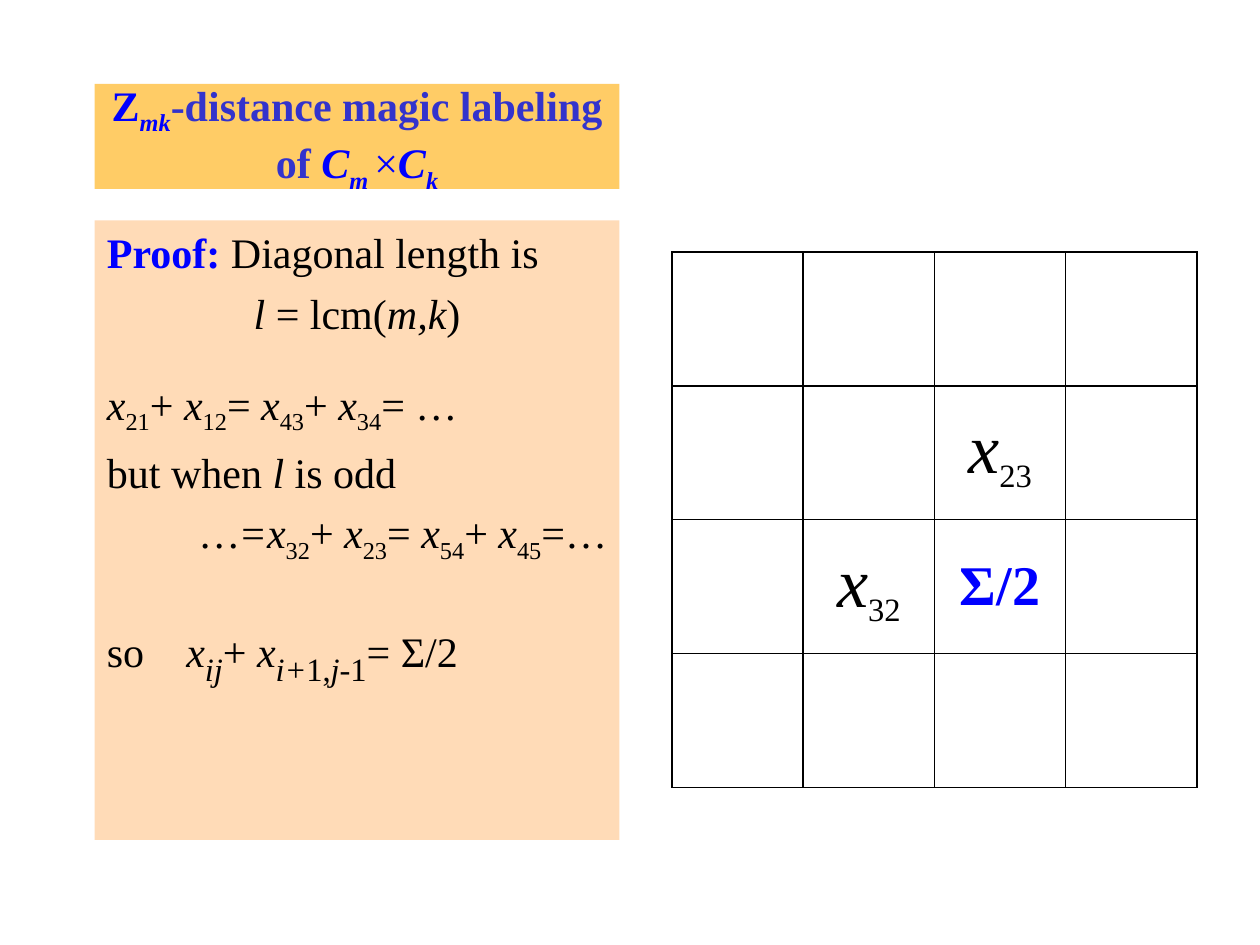
from dataclasses import dataclass

from lxml import etree
from pptx import Presentation, util as u
from pptx.dml.color import RGBColor
from pptx.enum import shapes, text
from pptx.oxml.ns import qn


@dataclass(frozen=True)
class Theme:
    font: str = "Times New Roman"
    ink: str = "000000"
    blue: str = "0000FF"
    violet: str = "3333CC"
    title_fill: str = "FFCC66"
    proof_fill: str = "FFDBB7"
    body_size: int = 24
    large_size: int = 32
    cell_size: int = 40
    line_gap: int = 6
    block_gap: int = 23
    conclusion_gap: int = 27
    border: float = 1


THEME = Theme()
LEFT, CENTER, RIGHT = text.PP_ALIGN.LEFT, text.PP_ALIGN.CENTER, text.PP_ALIGN.RIGHT
SLIDE_WIDTH, SLIDE_HEIGHT = 10, 7.5
GRID_COLUMNS, GRID_ROWS = 120, 90
TITLE_BOX = (9, 8, 50, 10)
PROOF_BOX = (9, 21, 50, 59)
MATRIX_BOX = (64, 24, 50, 51)
MATRIX_SIZE = 4
TAB_STOP = 0.63

# Style letters: i italic, b bold, s subscript, l large, c cell, B blue, V violet
TITLE = [("Z", "bB"), ("mk", "biBs"), ("-distance magic labeling of ", "bV"),
         ("C", "biB"), ("m ", "biBs"), ("×", "B"), ("C", "biB"), ("k", "biBs")]


def chain(start, indices, end):
    runs = [(start, "i")]
    for position, index in enumerate(indices):
        if position:
            runs += [("+" if position % 2 else "=", ""), (" x", "i")]
        runs.append((index, "s"))
    return runs + [(end, "")]


PROOF = [
    (LEFT, THEME.line_gap, [("Proof: ", "bB"), ("Diagonal length is", "")]),
    (CENTER, THEME.line_gap, [("l", "i"), (" = lcm(", ""), ("m,k", "i"), (")", "")]),
    (LEFT, THEME.block_gap, chain("x", ["21", "12", "43", "34"], "= …")),
    (LEFT, THEME.line_gap, [("but when ", ""), ("l", "i"), (" is odd", "")]),
    (RIGHT, THEME.line_gap, chain("…=x", ["32", "23", "54", "45"], "=…")),
    (LEFT, THEME.conclusion_gap,
     [("so\t", ""), ("x", "i"), ("ij", "isl"), ("+", ""), (" x", "i"), ("i+", "isl"),
      ("1,", "sl"), ("j-", "isl"), ("1", "sl"), ("= Σ/2", "")]),
]
MATRIX = {
    (1, 2): [("x", "ic"), ("23", "sl")],
    (2, 1): [("x", "ic"), ("32", "sl")],
    (2, 2): [("Σ/2", "blB")],
}


def place(box):
    units = (SLIDE_WIDTH / GRID_COLUMNS, SLIDE_HEIGHT / GRID_ROWS) * 2
    return [u.Inches(count * unit) for count, unit in zip(box, units)]


def write(paragraph, runs, alignment, gap=0):
    paragraph.alignment = alignment
    paragraph.space_before = u.Pt(gap)
    for words, style in runs:
        run = paragraph.add_run()
        run.text = words
        font = run.font
        font.name = THEME.font
        font.bold, font.italic = "b" in style, "i" in style
        size = (THEME.cell_size if "c" in style else
                THEME.large_size if "l" in style else THEME.body_size)
        font.size = u.Pt(size)
        color = (THEME.blue if "B" in style else
                 THEME.violet if "V" in style else THEME.ink)
        font.color.rgb = RGBColor.from_string(color)
        if "s" in style:
            run._r.get_or_add_rPr().set("baseline", "-25000")
        if "\t" in words:
            tabs = etree.SubElement(paragraph._p.get_or_add_pPr(), qn("a:tabLst"))
            etree.SubElement(tabs, qn("a:tab"), pos=str(u.Inches(TAB_STOP)), algn="l")


def add_panel(slide, box, color, anchor, lines):
    shape = slide.shapes.add_shape(shapes.MSO_SHAPE.RECTANGLE, *place(box))
    shape.shadow.inherit = False
    shape.fill.solid()
    shape.fill.fore_color.rgb = RGBColor.from_string(color)
    shape.line.fill.background()
    frame = shape.text_frame
    frame.word_wrap = True
    frame.vertical_anchor = anchor
    for index, (alignment, gap, runs) in enumerate(lines):
        paragraph = frame.add_paragraph() if index else frame.paragraphs[0]
        write(paragraph, runs, alignment, gap)


def add_borders(cell):
    properties = cell._tc.get_or_add_tcPr()
    for index, side in enumerate(("lnL", "lnR", "lnT", "lnB")):
        line = etree.Element(qn(f"a:{side}"), w=str(u.Pt(THEME.border)))
        fill = etree.SubElement(line, qn("a:solidFill"))
        etree.SubElement(fill, qn("a:srgbClr"), val=THEME.ink)
        properties.insert(index, line)


def add_matrix(slide):
    table = slide.shapes.add_table(MATRIX_SIZE, MATRIX_SIZE, *place(MATRIX_BOX)).table
    table.first_row = table.horz_banding = False
    for row in range(MATRIX_SIZE):
        for column in range(MATRIX_SIZE):
            cell = table.cell(row, column)
            cell.fill.background()
            cell.vertical_anchor = text.MSO_ANCHOR.MIDDLE
            cell.margin_left = cell.margin_right = u.Inches(0.05)
            cell.margin_top = cell.margin_bottom = u.Inches(0.05)
            add_borders(cell)
            write(cell.text_frame.paragraphs[0], MATRIX.get((row, column), []), CENTER)


def main():
    presentation = Presentation()
    presentation.slide_width = u.Inches(SLIDE_WIDTH)
    presentation.slide_height = u.Inches(SLIDE_HEIGHT)
    slide = presentation.slides.add_slide(presentation.slide_layouts[6])
    add_panel(slide, TITLE_BOX, THEME.title_fill, text.MSO_ANCHOR.MIDDLE,
              [(CENTER, 0, TITLE)])
    add_panel(slide, PROOF_BOX, THEME.proof_fill, text.MSO_ANCHOR.TOP, PROOF)
    add_matrix(slide)
    presentation.save("out.pptx")


if __name__ == "__main__":
    main()
